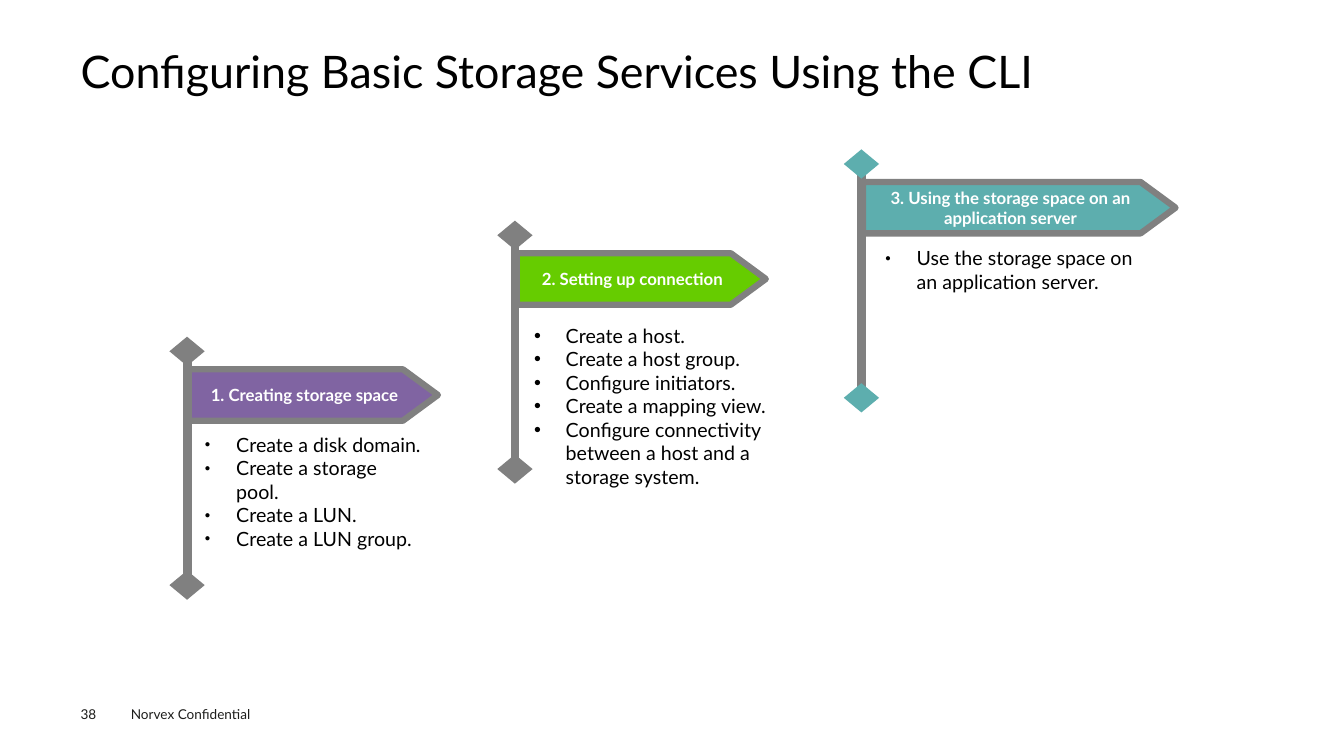
from lxml.etree import SubElement
from pptx import Presentation
from pptx.dml.color import RGBColor
from pptx.enum.shapes import MSO_CONNECTOR, MSO_SHAPE
from pptx.enum.text import MSO_ANCHOR, MSO_AUTO_SIZE, PP_ALIGN
from pptx.oxml.ns import qn
from pptx.util import Pt

FONT = "Lato"
COLORS = {
    "black": "000000", "white": "FFFFFF", "footer": "1D1D1B", "gray": "808080",
    "purple": "8064A2", "green": "66CC00", "teal": "5DAEAE",
}
DIAMOND_WIDTH, DIAMOND_HEIGHT = 25.2, 20.9
POLE_LENGTH = 167
MILESTONES = [
    {"origin": (121, 240.5), "end_color": "gray", "flag_color": "purple", "flag_width": 178,
     "heading": "1. Creating storage space", "placeholder": 1,
     "list_box": (139, 305.3, 169.2, 159.8), "bullet": "●", "bullet_size": 50,
     "steps": ["Create a disk domain.", "Create a storage pool.",
               "Create a LUN.", "Create a LUN group."]},
    {"origin": (355.2, 157.6), "end_color": "gray", "flag_color": "green", "flag_width": 178,
     "heading": "2. Setting up connection", "placeholder": 2,
     "list_box": (374.4, 227.5, 196.6, 236.2), "bullet": "•", "bullet_size": 100,
     "steps": ["Create a host.", "Create a host group.", "Configure initiators.",
               "Create a mapping view.",
               "Configure connectivity between a host and a storage system."]},
    {"origin": (602.7, 106.7), "end_color": "teal", "flag_color": "teal", "flag_width": 223.2,
     "heading": "3. Using the storage space on an application server", "placeholder": 4,
     "list_box": (625, 172.1, 206.6, 58.3), "bullet": "●", "bullet_size": 50,
     "steps": ["Use the storage space on an application server."]},
]


def color(name):
    """Return the named color as RGB."""
    return RGBColor.from_string(COLORS[name])


def place(shape, left, top, width, height):
    """Move and size a shape, in points."""
    shape.left, shape.top = Pt(left), Pt(top)
    shape.width, shape.height = Pt(width), Pt(height)


def add_bullet(paragraph, character, size):
    """Give a paragraph a hanging bullet."""
    properties = paragraph._p.get_or_add_pPr()
    properties.set("marL", str(Pt(22.5)))
    properties.set("indent", str(-Pt(22.5)))
    SubElement(properties, qn("a:buSzPct")).set("val", str(size * 1000))
    SubElement(properties, qn("a:buFont")).set("typeface", "Arial")
    SubElement(properties, qn("a:buChar")).set("char", character)


def write(shape, *lines, size, ink="black", bold=False, align=PP_ALIGN.LEFT,
          anchor=MSO_ANCHOR.TOP, margins=(7.2, 3.6), spacing=1.0,
          bullet=None, bullet_size=100):
    """Fill a shape with formatted paragraphs."""
    frame = shape.text_frame
    frame.word_wrap = True
    frame.auto_size = MSO_AUTO_SIZE.NONE
    frame.vertical_anchor = anchor
    frame.margin_left = frame.margin_right = Pt(margins[0])
    frame.margin_top = frame.margin_bottom = Pt(margins[1])
    for index, line in enumerate(lines):
        paragraph = frame.add_paragraph() if index else frame.paragraphs[0]
        if bullet:
            add_bullet(paragraph, bullet, bullet_size)
        paragraph.alignment = align
        paragraph.line_spacing = spacing
        paragraph.space_before = Pt(0)
        run = paragraph.add_run()
        run.text = line
        run.font.name = FONT
        run.font.size = Pt(size)
        run.font.bold = bold
        run.font.color.rgb = color(ink)


def add_label(slide, text, box, **text_format):
    """Add a text box."""
    label = slide.shapes.add_textbox(*map(Pt, box))
    write(label, text, **text_format)


def add_block(slide, kind, box, fill, line=None):
    """Add a filled preset shape, outlined if a line color is given."""
    shape = slide.shapes.add_shape(kind, *map(Pt, box))
    shape.shadow.inherit = False
    shape.fill.solid()
    shape.fill.fore_color.rgb = color(fill)
    if line:
        shape.line.color.rgb = color(line)
        shape.line.width = Pt(4.5)
    else:
        shape.line.fill.background()
    return shape


def add_pole(slide, x, top, bottom):
    """Add a thick vertical line."""
    pole = slide.shapes.add_connector(MSO_CONNECTOR.STRAIGHT, Pt(x), Pt(top), Pt(x), Pt(bottom))
    pole.line.color.rgb = color("gray")
    pole.line.width = Pt(6)
    SubElement(pole._element.spPr, qn("a:effectLst"))


def add_milestone(slide, milestone):
    """Add a pole with its diamonds, flag and list of steps."""
    left, top = milestone["origin"]
    add_pole(slide, left + 12.8, top + 12.2, top + 177)
    for diamond_top in (top, top + POLE_LENGTH):
        add_block(slide, MSO_SHAPE.DIAMOND,
                  (left, diamond_top, DIAMOND_WIDTH, DIAMOND_HEIGHT), milestone["end_color"])
    flag = add_block(slide, MSO_SHAPE.PENTAGON,
                     (left + 13.8, top + 23.3, milestone["flag_width"], 36.7),
                     milestone["flag_color"], line="gray")
    flag.adjustments[0] = 0.68
    write(flag, milestone["heading"], size=12, ink="white", bold=True,
          align=PP_ALIGN.CENTER, anchor=MSO_ANCHOR.MIDDLE)
    steps = slide.placeholders[milestone["placeholder"]]
    place(steps, *milestone["list_box"])
    write(steps, *milestone["steps"], size=14,
          bullet=milestone["bullet"], bullet_size=milestone["bullet_size"])


def main():
    """Build and save the slide."""
    presentation = Presentation()
    presentation.slide_width, presentation.slide_height = Pt(960), Pt(540)
    slide = presentation.slides.add_slide(presentation.slide_layouts.get_by_name("Comparison"))
    place(slide.shapes.title, 57.6, 35.3, 844.6, 38.9)
    write(slide.shapes.title, "Configuring Basic Storage Services Using the CLI",
          size=32, margins=(0, 0), spacing=0.9)
    for milestone in MILESTONES:
        add_milestone(slide, milestone)
    unused = slide.placeholders[3]._element
    unused.getparent().remove(unused)
    add_label(slide, "38", (57.6, 504, 39.6, 11.5), size=9.7, ink="footer", margins=(0, 0))
    add_label(slide, "Norvex Confidential", (86.4, 500.4, 115.2, 19.4), size=9.7, ink="footer")
    presentation.save("out.pptx")


if __name__ == "__main__":
    main()
